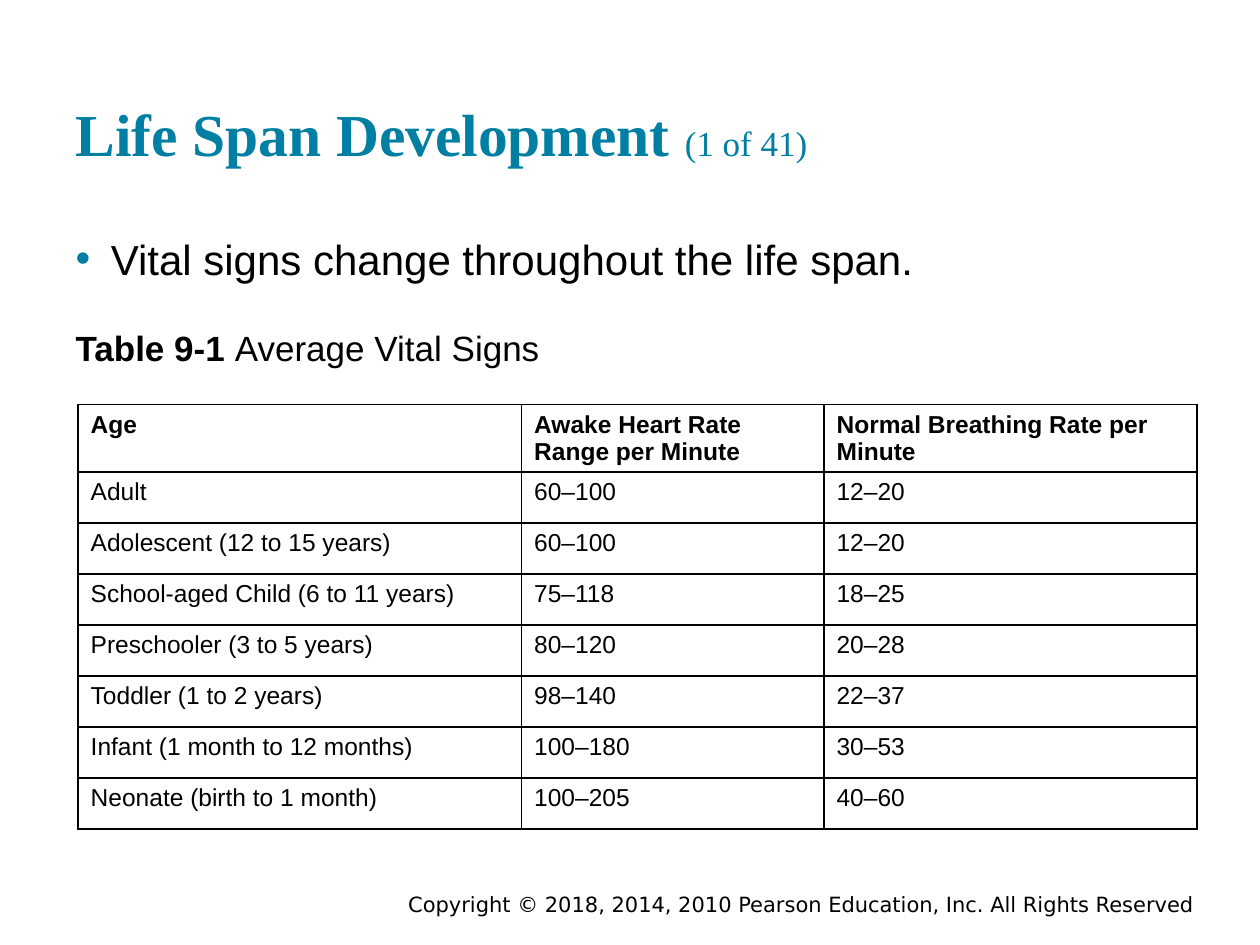
from lxml.etree import SubElement
from pptx import Presentation
from pptx.dml.color import RGBColor
from pptx.enum.text import MSO_ANCHOR as Anchor, MSO_AUTO_SIZE as AutoSize, PP_ALIGN as Align
from pptx.oxml.ns import qn
from pptx.util import Inches, Pt

COLORS = {"accent": "007FA3", "text": "000000", "border": "000000"}
HEADING_FONT, BODY_FONT, FOOTER_FONT = "Times New Roman", "Arial", "DejaVu Sans"

presentation = Presentation()
presentation.slide_width, presentation.slide_height = Inches(10), Inches(7.5)
WIDTH, HEIGHT = presentation.slide_width, presentation.slide_height
slide = presentation.slides.add_slide(presentation.slide_layouts[3])
title, bullet_box, caption_box = slide.placeholders


def place(shape, left, top, width, height, anchor):
    """Position a text shape by shares of the slide and set up its frame."""
    shape.left, shape.width = int(WIDTH * left), int(WIDTH * width)
    shape.top, shape.height = int(HEIGHT * top), int(HEIGHT * height)
    frame = shape.text_frame
    frame.word_wrap, frame.auto_size = True, AutoSize.NONE
    frame.vertical_anchor = anchor
    frame.margin_left = frame.margin_right = Inches(0.1)
    frame.margin_top = frame.margin_bottom = Inches(0.1)
    frame.paragraphs[0].space_before = Pt(0)
    return frame.paragraphs[0]


def add_run(paragraph, text, size, font=BODY_FONT, color="text", bold=False):
    run = paragraph.add_run()
    run.text = text
    run.font.name, run.font.size, run.font.bold = font, Pt(size), bold
    run.font.color.rgb = RGBColor.from_string(COLORS[color])


# Title
paragraph = place(title, 0.05, 0.032, 0.9, 0.16, Anchor.BOTTOM)
paragraph.alignment = Align.LEFT
add_run(paragraph, "Life Span Development ", 34, HEADING_FONT, "accent", True)
add_run(paragraph, "(1 of 41)", 20, HEADING_FONT, "accent")

# Bullet
paragraph = place(bullet_box, 0.05, 0.2333, 0.9, 0.0787, Anchor.TOP)
properties = paragraph._p.get_or_add_pPr()
properties.set("marL", str(Inches(0.28)))
properties.set("indent", str(-Inches(0.28)))
bullet_color = SubElement(properties, qn("a:buClr"))
SubElement(bullet_color, qn("a:srgbClr"), val=COLORS["accent"])
SubElement(properties, qn("a:buFont"), typeface=BODY_FONT)
SubElement(properties, qn("a:buChar"), char="•")
add_run(paragraph, "Vital signs change throughout the life span.", 24)

# Table caption
paragraph = place(caption_box, 0.05, 0.332, 0.9, 0.0613, Anchor.TOP)
properties = paragraph._p.get_or_add_pPr()
properties.set("marL", "0")
properties.set("indent", "0")
SubElement(properties, qn("a:buNone"))
add_run(paragraph, "Table 9-1 ", 20, bold=True)
add_run(paragraph, "Average Vital Signs", 20)

# Vital signs table
vital_signs = [
    ("Age", "Awake Heart Rate Range per Minute", "Normal Breathing Rate per Minute"),
    ("Adult", "60–100", "12–20"),
    ("Adolescent (12 to 15 years)", "60–100", "12–20"),
    ("School-aged Child (6 to 11 years)", "75–118", "18–25"),
    ("Preschooler (3 to 5 years)", "80–120", "20–28"),
    ("Toddler (1 to 2 years)", "98–140", "22–37"),
    ("Infant (1 month to 12 months)", "100–180", "30–53"),
    ("Neonate (birth to 1 month)", "100–205", "40–60"),
]
column_widths = [3.52, 2.4, 2.96]
row_heights = [0.53] + [0.405] * (len(vital_signs) - 1)
table = slide.shapes.add_table(
    len(vital_signs), len(column_widths), Inches(0.62), Inches(3.21),
    Inches(sum(column_widths)), Inches(sum(row_heights))).table
table.first_row = table.horz_banding = False
for column, width in zip(table.columns, column_widths):
    column.width = Inches(width)
for row_index, (row, values) in enumerate(zip(table.rows, vital_signs)):
    row.height = Inches(row_heights[row_index])
    for cell, value in zip(row.cells, values):
        add_run(cell.text_frame.paragraphs[0], value, 14, bold=row_index == 0)
        cell_properties = cell._tc.get_or_add_tcPr()
        for side in ("lnL", "lnR", "lnT", "lnB"):
            line = SubElement(cell_properties, qn(f"a:{side}"), w=str(Pt(1)))
            line_fill = SubElement(line, qn("a:solidFill"))
            SubElement(line_fill, qn("a:srgbClr"), val=COLORS["border"])
        cell.fill.background()

# Copyright line
footer = slide.shapes.add_textbox(0, 0, 0, 0)
paragraph = place(footer, 0.292, 0.94, 0.666, 0.0333, Anchor.MIDDLE)
footer.text_frame.margin_top = footer.text_frame.margin_bottom = 0
paragraph.alignment = Align.RIGHT
add_run(paragraph, "Copyright © 2018, 2014, 2010 Pearson Education, Inc. All Rights Reserved",
        12, FOOTER_FONT)

presentation.save("out.pptx")
